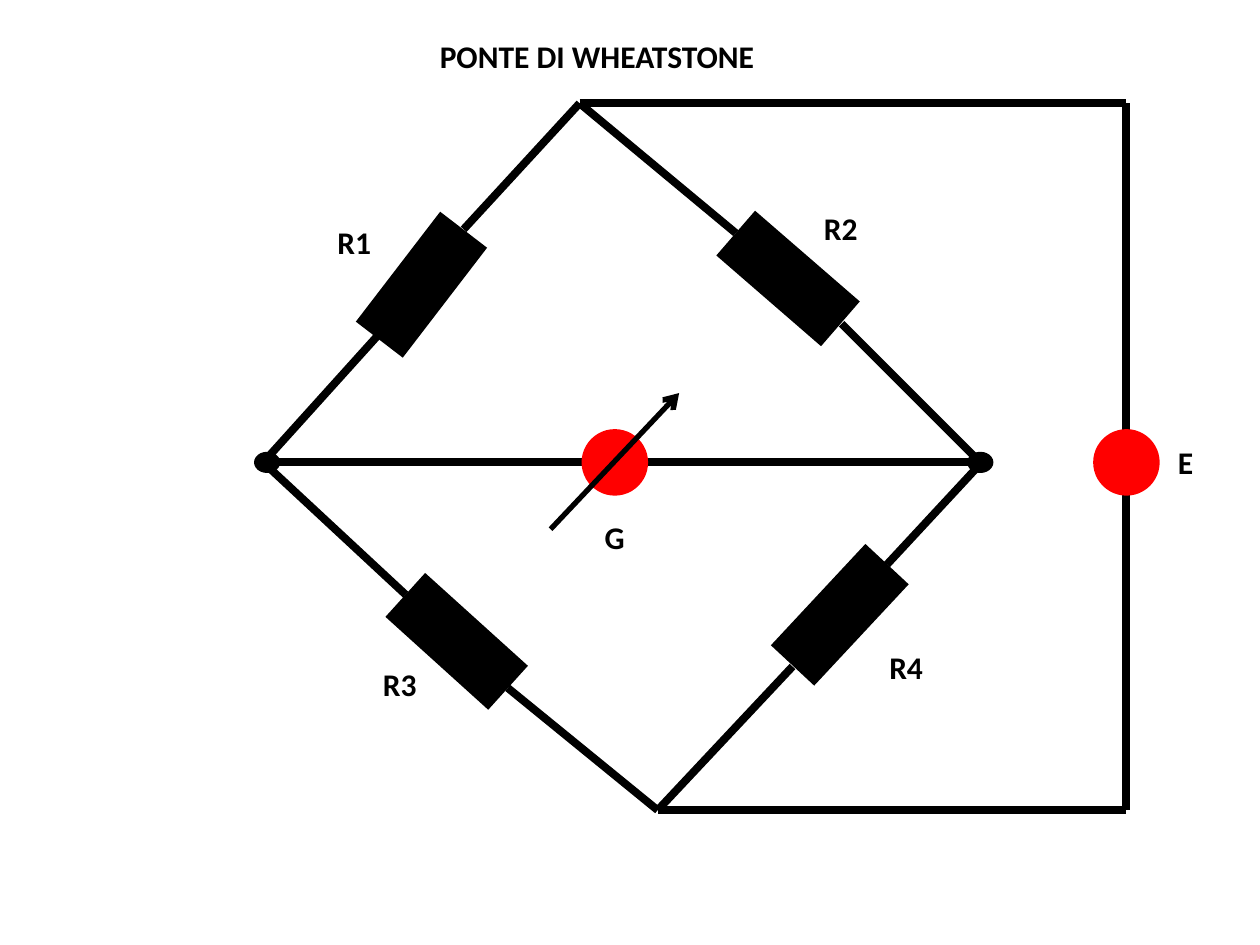
from lxml.etree import SubElement
from pptx import Presentation
from pptx.dml.color import RGBColor
from pptx.enum.shapes import MSO_CONNECTOR, MSO_SHAPE
from pptx.enum.text import MSO_ANCHOR, MSO_AUTO_SIZE, PP_ALIGN
from pptx.oxml.ns import qn
from pptx.util import Inches, Pt

COLORS = {"ink": "000000", "source": "FF0000"}
FONT = {"name": "Calibri", "size": Pt(18), "bold": True}
FRAME = {
    "word_wrap": False,
    "auto_size": MSO_AUTO_SIZE.SHAPE_TO_FIT_TEXT,
    "vertical_anchor": MSO_ANCHOR.TOP,
}

prs = Presentation()
prs.slide_width, prs.slide_height = Inches(10), Inches(7.5)
s = prs.slides.add_slide(prs.slide_layouts[5])


def add_wire(start, end, width=4.5):
    c = s.shapes.add_connector(
        MSO_CONNECTOR.STRAIGHT, *[Inches(v) for v in (*start, *end)]
    )
    c.line.color.rgb = RGBColor.from_string(COLORS["ink"])
    c.line.width = Pt(width)
    SubElement(c._element.spPr, qn("a:effectLst"))
    return c


def write_text(sp, text):
    tf = sp.text_frame
    for name, value in FRAME.items():
        setattr(tf, name, value)
    p = tf.paragraphs[0]
    p.alignment = PP_ALIGN.LEFT
    r = p.add_run()
    r.text = text
    for name, value in FONT.items():
        setattr(r.font, name, value)
    r.font.color.rgb = RGBColor.from_string(COLORS["ink"])


title = s.shapes.title
title.left, title.top = Inches(3.39), Inches(0.24)
title.width, title.height = Inches(2.72), Inches(0.4)
write_text(title, "PONTE DI WHEATSTONE")

resistors = [
    (6.43, 4.33, 43),
    (6.02, 1.66, 310.9),
    (3.39, 4.54, 312.1),
    (3.11, 1.71, 37.5),
]
for x, y, angle in resistors:
    sp = s.shapes.add_shape(
        MSO_SHAPE.RECTANGLE, Inches(x), Inches(y), Inches(0.47), Inches(1.1)
    )
    sp.rotation = angle
    sp.shadow.inherit = False
    sp.fill.solid()
    sp.fill.fore_color.rgb = RGBColor.from_string(COLORS["ink"])
    sp.line.fill.background()

top, bottom = (4.6, 0.82), (5.22, 6.43)
left, right = (2.09, 3.67), (7.78, 3.67)
outer_x, radius = 8.94, 0.25
wires = [
    ((3.68, 1.82), top),
    (top, (5.84, 1.85)),
    ((3.01, 2.65), left),
    (left, (3.22, 4.72)),
    ((7.04, 4.48), (7.82, 3.64)),
    ((6.68, 2.57), right),
    ((4.03, 5.46), bottom),
    ((6.29, 5.29), bottom),
    (left, right),
    (top, (outer_x, top[1])),
    (bottom, (outer_x, bottom[1])),
    ((outer_x, top[1]), (outer_x, left[1] - radius)),
    ((outer_x, left[1] + radius), (outer_x, bottom[1])),
]
for start, end in wires:
    add_wire(start, end)

circles = [
    (4.88, 2 * radius, 2 * radius, "source"),
    (outer_x, 2 * radius, 2 * radius, "source"),
    (2.12, 0.18, 0.14, "ink"),
    (right[0], 0.18, 0.14, "ink"),
]
for x, w, h, color in circles:
    sp = s.shapes.add_shape(
        MSO_SHAPE.FLOWCHART_CONNECTOR,
        Inches(x - w / 2), Inches(left[1] - h / 2), Inches(w), Inches(h),
    )
    sp.shadow.inherit = False
    sp.fill.solid()
    sp.fill.fore_color.rgb = RGBColor.from_string(COLORS[color])
    sp.line.color.rgb = RGBColor.from_string(COLORS[color])
    sp.line.width = Pt(2)

needle = add_wire((4.37, 4.2), (5.39, 3.12), 3)
SubElement(needle.line._get_or_add_ln(), qn("a:tailEnd"), type="arrow")

labels = [
    ("R1", 2.58, 1.72, 0.47),
    ("R2", 6.44, 1.61, 0.47),
    ("R3", 2.94, 5.23, 0.47),
    ("R4", 6.96, 5.09, 0.47),
    ("G", 4.7, 4.06, 0.36),
    ("E", 9.25, 3.47, 0.32),
]
for text, x, y, w in labels:
    sp = s.shapes.add_textbox(Inches(x), Inches(y), Inches(w), Inches(0.4))
    write_text(sp, text)

prs.save("out.pptx")
